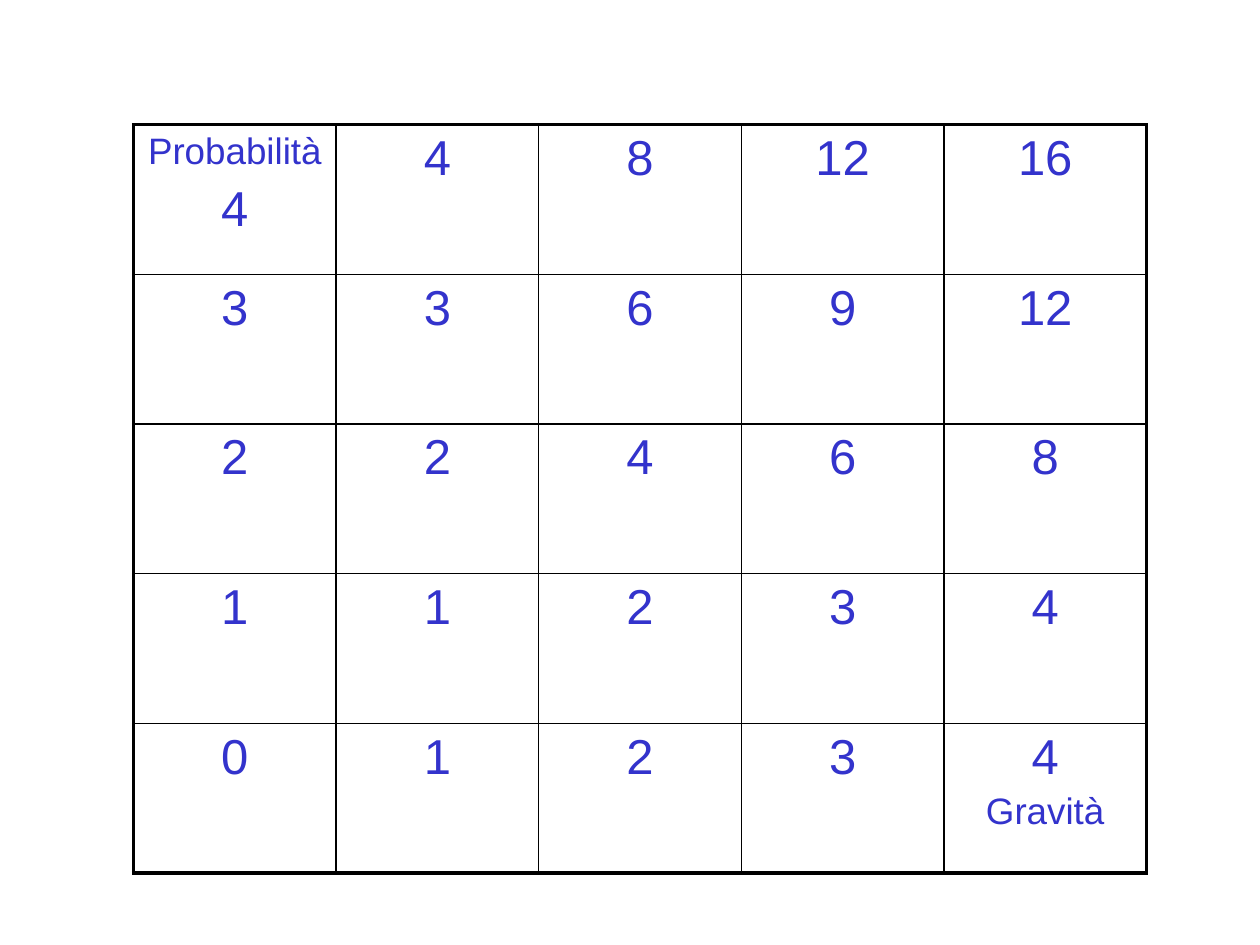
from dataclasses import dataclass

from lxml.etree import SubElement
from pptx import Presentation
from pptx.dml.color import RGBColor
from pptx.enum.text import PP_ALIGN
from pptx.oxml.ns import qn
from pptx.util import Inches, Pt


@dataclass(frozen=True)
class Theme:
    font: str = "Arial"
    text: str = "3333CC"
    border: str = "000000"
    number_size: float = 28
    label_size: float = 21
    outer_line: float = 2.25
    inner_line: float = 1


theme = Theme()
MAXIMUM = 4
COUNT = MAXIMUM + 1


def add_border(cell, side, width):
    line = SubElement(cell._tc.get_or_add_tcPr(), qn(f"a:ln{side}"), w=str(Pt(width)))
    fill = SubElement(line, qn("a:solidFill"))
    SubElement(fill, qn("a:srgbClr"), val=theme.border)


def write_paragraph(paragraph, text, size):
    paragraph.alignment = PP_ALIGN.CENTER
    spacing = SubElement(paragraph._p.get_or_add_pPr(), qn("a:spcBef"))
    SubElement(spacing, qn("a:spcPct"), val="20000")
    run = paragraph.add_run()
    run.text = text
    run.font.name = theme.font
    run.font.size = Pt(size)
    run.font.color.rgb = RGBColor.from_string(theme.text)


presentation = Presentation()
presentation.slide_width = Inches(10)
presentation.slide_height = Inches(7.5)
slide = presentation.slides.add_slide(presentation.slide_layouts[6])

table = slide.shapes.add_table(
    COUNT, COUNT, Inches(1.06), Inches(0.99), Inches(8.04), Inches(5.94)
).table
table.first_row = False
table.horz_banding = False

for row in range(COUNT):
    probability = MAXIMUM - row
    for severity in range(COUNT):
        cell = table.cell(row, severity)

        # The left column and bottom row are the scales; the rest is their product.
        if severity == 0:
            value = probability
        elif probability == 0:
            value = severity
        else:
            value = probability * severity

        lines = [(str(value), theme.number_size)]
        if (row, severity) == (0, 0):
            lines.insert(0, ("Probabilità", theme.label_size))
        elif (row, severity) == (MAXIMUM, MAXIMUM):
            lines.append(("Gravità", theme.label_size))

        text_frame = cell.text_frame
        for index, (text, size) in enumerate(lines):
            paragraph = text_frame.add_paragraph() if index else text_frame.paragraphs[0]
            write_paragraph(paragraph, text, size)

        outer_sides = {
            "L": severity == 0,
            "R": severity == MAXIMUM,
            "T": row == 0,
            "B": row == MAXIMUM,
        }
        for side, is_outer in outer_sides.items():
            add_border(cell, side, theme.outer_line if is_outer else theme.inner_line)
        cell.fill.background()

presentation.save("out.pptx")
